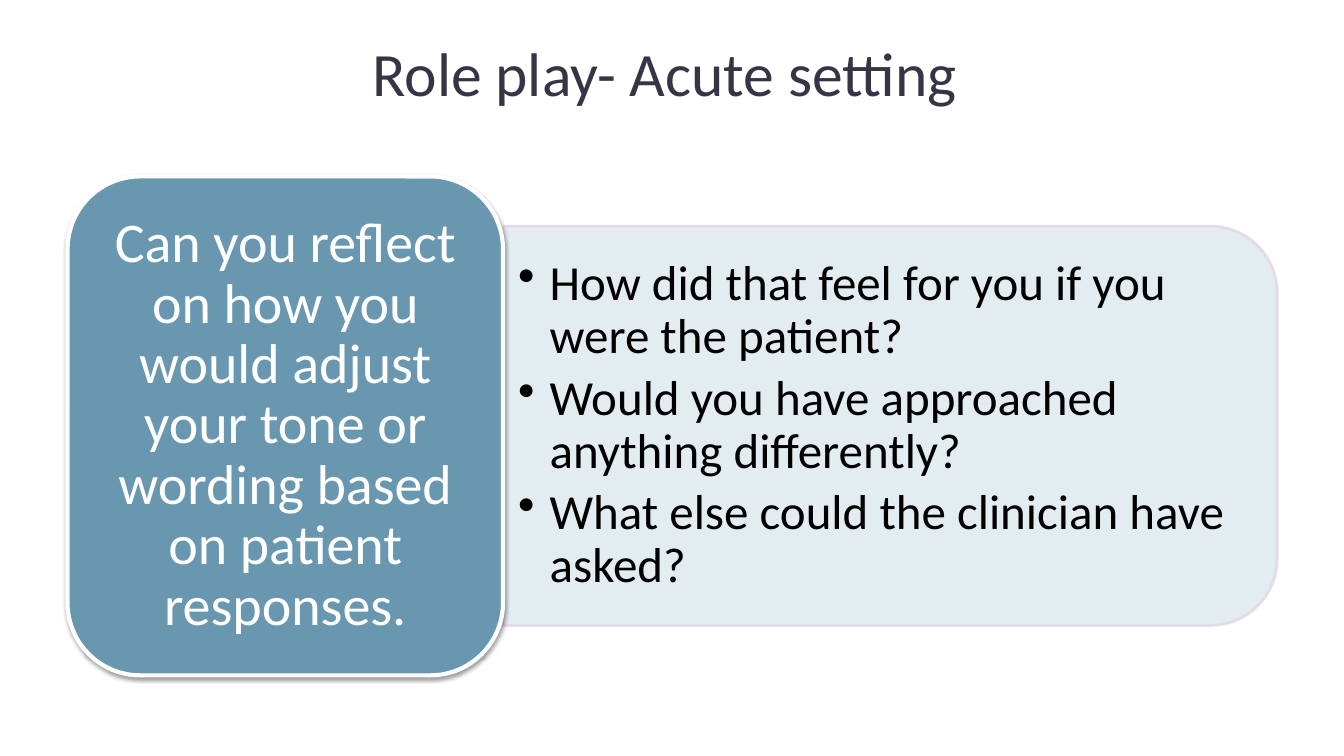
"""Build the role play reflection slide: a prompt card beside a panel of questions."""
from lxml import etree
from pptx import Presentation
from pptx.dml.color import RGBColor
from pptx.enum.shapes import MSO_SHAPE
from pptx.enum.text import MSO_ANCHOR, PP_ALIGN
from pptx.oxml.ns import qn
from pptx.util import Pt

ROUND_RECT, ROUND_TOP = MSO_SHAPE.ROUNDED_RECTANGLE, MSO_SHAPE.ROUND_2_SAME_RECTANGLE
CENTER, LEFT = PP_ALIGN.CENTER, PP_ALIGN.LEFT
MIDDLE, TOP = MSO_ANCHOR.MIDDLE, MSO_ANCHOR.TOP
NAVY = RGBColor(0x37, 0x35, 0x45)
STEEL = RGBColor(0x69, 0x97, 0xAF)
MIST = RGBColor(0xE1, 0xEA, 0xEF)
LILAC = RGBColor(0xE3, 0xD9, 0xEA)
WHITE = RGBColor(0xFF, 0xFF, 0xFF)
BLACK = RGBColor(0x00, 0x00, 0x00)
QUESTIONS = [
    "How did that feel for you if you were the patient?",
    "Would you have approached anything differently?",
    "What else could the clinician have asked?",
]
PROMPT = "Can you reflect on how you would adjust your tone or wording based on patient responses."
SIDE, CARD_TOP, CARD_WIDTH, CARD_HEIGHT = 48.24, 126, 311.04, 356.4
PANEL_WIDTH, PANEL_HEIGHT = 552.96, 285.12
PANEL_LEFT = SIDE + CARD_WIDTH
MIDLINE = CARD_TOP + CARD_HEIGHT / 2
INDENT = 22.5


def add_panel(kind, left, top, width, height, fill, line, line_width):
    panel = slide.shapes.add_shape(kind, Pt(left), Pt(top), Pt(width), Pt(height))
    panel.shadow.inherit = False
    panel.fill.solid()
    panel.fill.fore_color.rgb = fill
    panel.line.color.rgb = line
    panel.line.width = Pt(line_width)
    return panel


def write(holder, lines, size, color, frame_format, paragraph_format):
    frame = holder.text_frame
    frame.word_wrap = True
    for name, value in frame_format.items():
        setattr(frame, name, value)
    frame.text = "\n".join(lines)
    for paragraph in frame.paragraphs:
        for name, value in paragraph_format.items():
            setattr(paragraph, name, value)
        for name, value in {"name": "Calibri", "size": Pt(size)}.items():
            setattr(paragraph.font, name, value)
        paragraph.font.color.rgb = color


prs = Presentation()
prs.slide_width, prs.slide_height = Pt(960), Pt(540)
slide = prs.slides.add_slide(prs.slide_layouts[6])

title = slide.shapes.add_textbox(Pt(48), Pt(21.6), Pt(864), Pt(90))
write(title, ["Role play- Acute setting "], 44, NAVY,
      {"vertical_anchor": TOP}, {"alignment": CENTER})

panel = add_panel(ROUND_TOP, PANEL_LEFT + (PANEL_WIDTH - PANEL_HEIGHT) / 2,
                  MIDLINE - PANEL_WIDTH / 2, PANEL_HEIGHT, PANEL_WIDTH, MIST, LILAC, 2)
panel.rotation = 90
for paint in panel.fill, panel.line.fill:
    color = paint._xPr.find(qn("a:solidFill"))[0]
    etree.SubElement(color, qn("a:alpha"), val="90000")

questions = slide.shapes.add_textbox(Pt(PANEL_LEFT), Pt(MIDLINE - 128.5), Pt(539.3), Pt(257))
write(questions, QUESTIONS, 35, BLACK,
      {"vertical_anchor": MIDDLE, "margin_left": Pt(10.8), "margin_right": Pt(10.8),
       "margin_top": Pt(5), "margin_bottom": Pt(5)},
      {"alignment": LEFT, "line_spacing": 0.9, "space_after": Pt(6.3)})
for paragraph in questions.text_frame.paragraphs:
    properties = paragraph._p.get_or_add_pPr()
    properties.set("marL", str(Pt(INDENT)))
    properties.set("indent", str(-Pt(INDENT)))
    bullet = etree.Element(qn("a:buChar"), char="•")
    properties.find(qn("a:spcAft")).addnext(bullet)

card = add_panel(ROUND_RECT, SIDE, CARD_TOP, CARD_WIDTH, CARD_HEIGHT, STEEL, WHITE, 3)
write(card, [PROMPT], 40, WHITE,
      {"vertical_anchor": MIDDLE, "margin_left": Pt(12), "margin_right": Pt(12),
       "margin_top": Pt(6), "margin_bottom": Pt(6)},
      {"alignment": CENTER, "line_spacing": 0.9})
effects = card._element.spPr.find(qn("a:effectLst"))
shadow = etree.SubElement(effects, qn("a:outerShdw"), blurRad=str(Pt(3.1)),
                          dist=str(Pt(1.6)), dir="5400000", rotWithShape="0")
shade = etree.SubElement(shadow, qn("a:srgbClr"), val=str(BLACK))
etree.SubElement(shade, qn("a:alpha"), val="38000")

prs.save("out.pptx")
